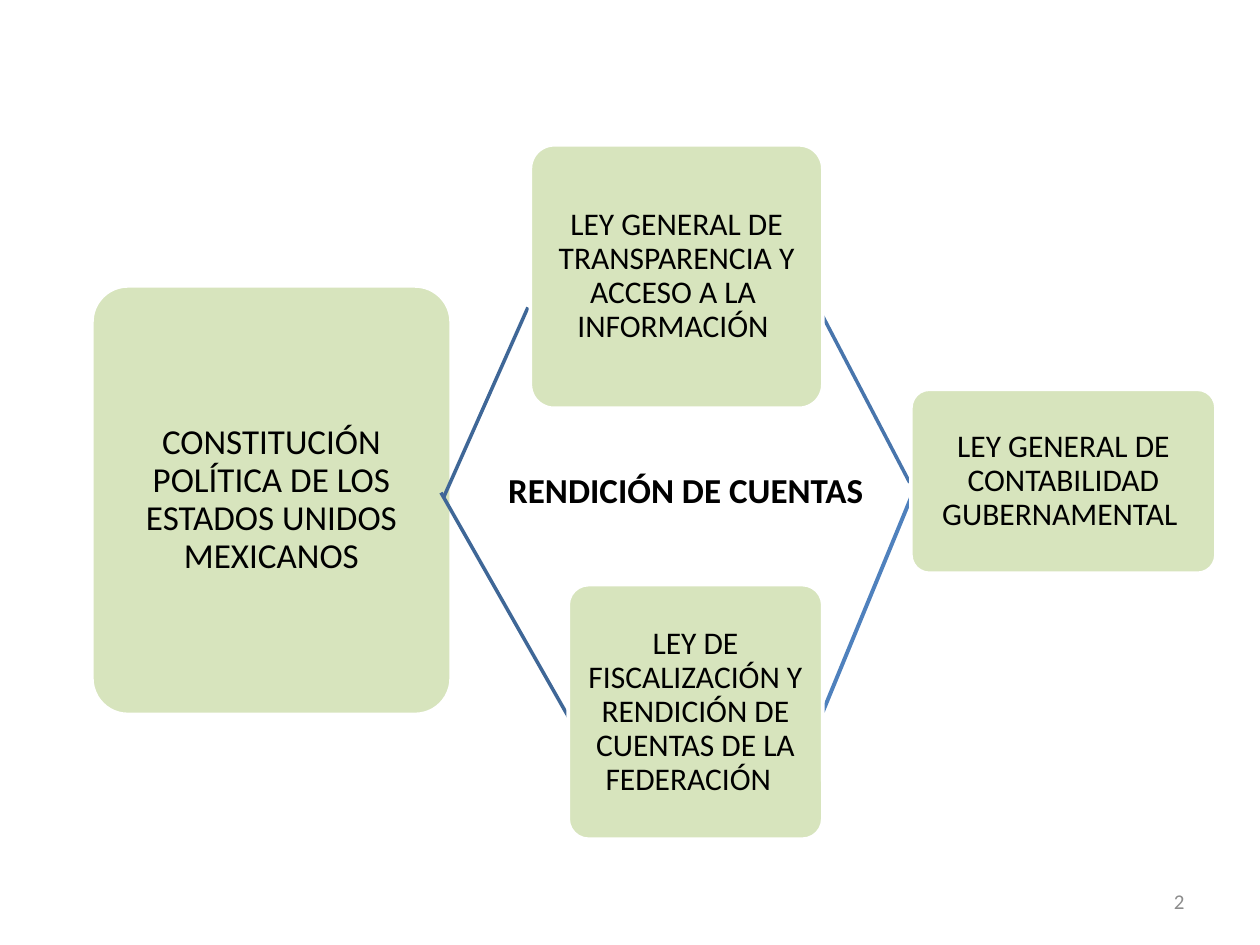
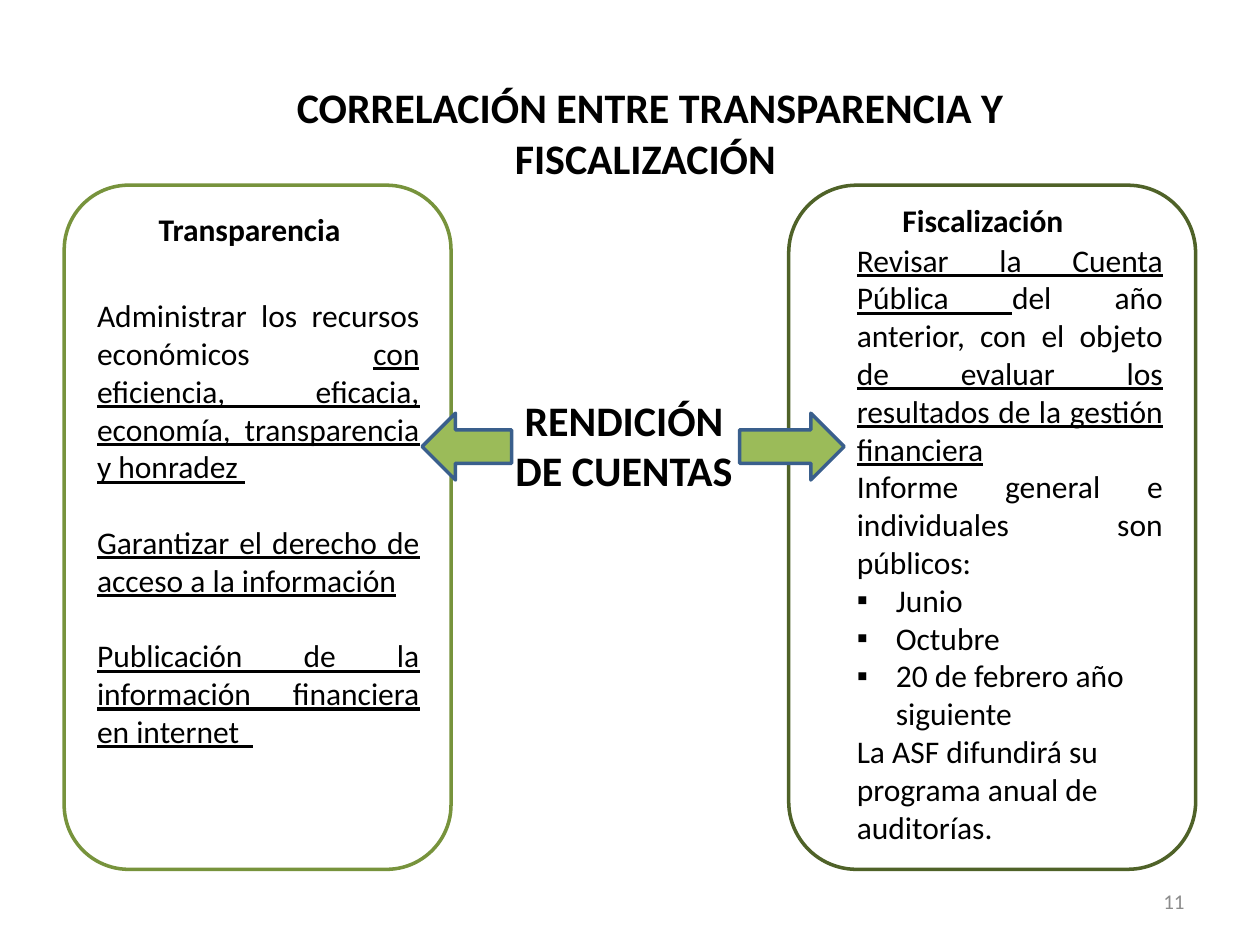
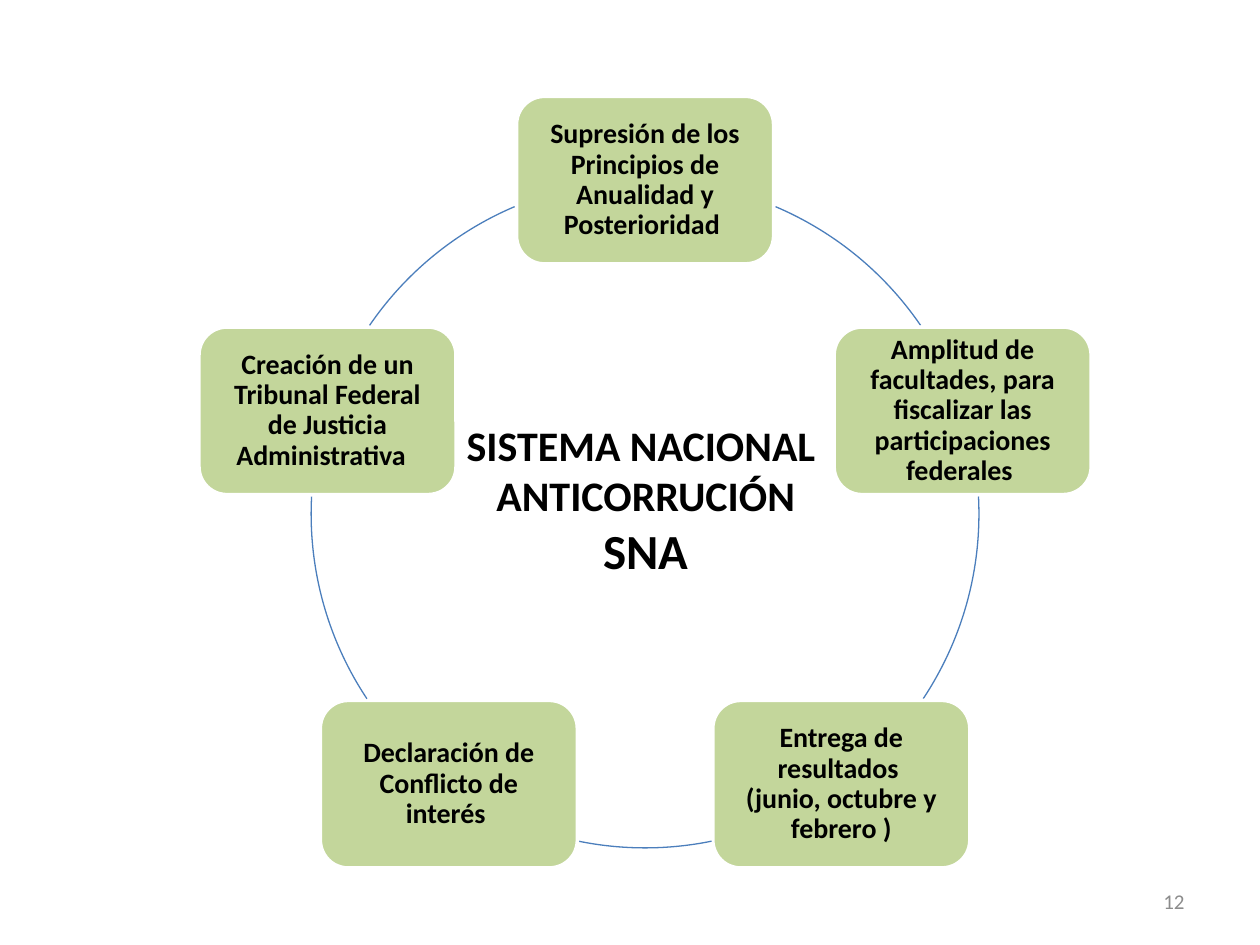
import math
from dataclasses import dataclass

from lxml import etree
from pptx import Presentation
from pptx.dml.color import RGBColor
from pptx.enum.shapes import MSO_CONNECTOR, MSO_SHAPE
from pptx.enum.text import MSO_ANCHOR, MSO_AUTO_SIZE, PP_ALIGN
from pptx.oxml.ns import qn
from pptx.util import Inches, Pt

ROUNDED, ARC = MSO_SHAPE.ROUNDED_RECTANGLE, MSO_SHAPE.ARC
LEFT_ARROW, RIGHT_ARROW = MSO_SHAPE.LEFT_ARROW, MSO_SHAPE.RIGHT_ARROW
STRAIGHT = MSO_CONNECTOR.STRAIGHT
TOP, MIDDLE = MSO_ANCHOR.TOP, MSO_ANCHOR.MIDDLE
LEFT, CENTER, RIGHT, JUSTIFY = PP_ALIGN.LEFT, PP_ALIGN.CENTER, PP_ALIGN.RIGHT, PP_ALIGN.JUSTIFY
LEFT_SIDE = 1


@dataclass(frozen=True)
class Theme:
    font: str = "Calibri"
    black: RGBColor = RGBColor.from_string("000000")
    white: RGBColor = RGBColor.from_string("FFFFFF")
    gray: RGBColor = RGBColor.from_string("8C8C8C")
    pale_green: RGBColor = RGBColor.from_string("D7E4BD")
    soft_green: RGBColor = RGBColor.from_string("C3D69B")
    arrow_green: RGBColor = RGBColor.from_string("9BBB59")
    panel_green: RGBColor = RGBColor.from_string("77933C")
    dark_green: RGBColor = RGBColor.from_string("4F6228")
    dark_blue: RGBColor = RGBColor.from_string("3F6797")
    middle_blue: RGBColor = RGBColor.from_string("4875AC")
    light_blue: RGBColor = RGBColor.from_string("4F81BD")
    arrow_blue: RGBColor = RGBColor.from_string("3A5F8C")
    ring_blue: RGBColor = RGBColor.from_string("4B7EBC")
    acronym: int = 28
    title: int = 24
    large: int = 20
    body: int = 18
    node: int = 16
    footer: int = 12


THEME = Theme()

presentation = Presentation()
presentation.slide_width, presentation.slide_height = Inches(10), Inches(7.5)
COLUMN = presentation.slide_width / 100
ROW = presentation.slide_height / 75


def area(left, top, width, height):
    """Turn columns and rows of the grid into slide lengths."""
    return [round(left * COLUMN), round(top * ROW), round(width * COLUMN), round(height * ROW)]


def write(shape, lines, size, bold=False, alignment=CENTER, color=THEME.black, anchor=TOP):
    """Fill a shape with paragraphs; parts between underscores are underlined."""
    frame = shape.text_frame
    frame.word_wrap, frame.auto_size, frame.vertical_anchor = True, MSO_AUTO_SIZE.NONE, anchor
    for index, line in enumerate(lines):
        paragraph = frame.paragraphs[0] if index == 0 else frame.add_paragraph()
        paragraph.alignment, paragraph.space_before = alignment, Pt(0)
        for part_index, part in enumerate(line.split("_")):
            if part:
                run = paragraph.add_run()
                run.text = part
                run.font.name, run.font.size, run.font.bold = THEME.font, Pt(size), bold
                run.font.color.rgb = color
                run.font.underline = part_index % 2 == 1
    return frame


# Slides with their titles and numbers
TITLE_ONLY, TWO_CONTENT = presentation.slide_layouts[5], presentation.slide_layouts[3]
slides = []
for layout, number, title_area, title_lines, title_size in [
    (TITLE_ONLY, "2", (38.2, 36.7, 33.1, 7.7), ["RENDICIÓN DE CUENTAS "], THEME.large),
    (TWO_CONTENT, "11", (13.8, 6, 75.6, 9.1),
     ["CORRELACIÓN ENTRE TRANSPARENCIA Y FISCALIZACIÓN "], THEME.title),
    (TITLE_ONLY, "12", (34.3, 32.8, 33.9, 13.8),
     ["SISTEMA NACIONAL ", "ANTICORRUCIÓN", "SNA"], THEME.title),
]:
    slide = presentation.slides.add_slide(layout)
    title = slide.shapes.title
    title.left, title.top, title.width, title.height = area(*title_area)
    write(title, title_lines, title_size, bold=True)
    footer = slide.shapes.add_textbox(*area(71.7, 69.5, 23.3, 4))
    write(footer, [number], THEME.footer, alignment=RIGHT, color=THEME.gray, anchor=MIDDLE)
    slides.append(slide)
laws_slide, correlation_slide, system_slide = slides

# Laws: links lie above the constitution and below the other laws
laws = [
    ((7.3, 22.7, 28.5, 34), 0.1, 0.1, THEME.large,
     "CONSTITUCIÓN POLÍTICA DE LOS ESTADOS UNIDOS MEXICANOS"),
    ((42.1, 11.5, 23.2, 20.9), 0.09, 0.07, THEME.body,
     "LEY GENERAL DE TRANSPARENCIA Y ACCESO A LA  INFORMACIÓN "),
    ((72.3, 30.9, 24.2, 14.6), 0.1, 0.05, THEME.body,
     "LEY GENERAL DE CONTABILIDAD GUBERNAMENTAL "),
    ((45.1, 46.4, 20.2, 20.2), 0.08, 0.04, THEME.body,
     "LEY DE FISCALIZACIÓN Y RENDICIÓN DE CUENTAS DE LA FEDERACIÓN  "),
]
links = [
    ((35.2, 39.5), (41.9, 24.4), THEME.dark_blue, 2),
    ((65.3, 25.1), (72.2, 38.3), THEME.middle_blue, 2),
    ((35, 39.1), (45.8, 58.1), THEME.dark_blue, 2),
    ((72.3, 39.5), (65.3, 56.7), THEME.light_blue, 2.25),
]
link_lines = []
for index, (law_area, corner, margin, size, text) in enumerate(laws):
    law = laws_slide.shapes.add_shape(ROUNDED, *area(*law_area))
    law.adjustments[0] = corner
    law.shadow.inherit = False
    law.fill.solid()
    law.fill.fore_color.rgb = THEME.pale_green
    law.line.color.rgb, law.line.width = THEME.white, Pt(2)
    frame = write(law, [text], size, anchor=MIDDLE)
    frame.paragraphs[0].line_spacing = 0.9
    frame.margin_left = frame.margin_right = frame.margin_top = frame.margin_bottom = Inches(margin)
    if index == 0:
        for start, end, color, width in links:
            link = laws_slide.shapes.add_connector(STRAIGHT, *area(*start, *end))
            link.line.color.rgb, link.line.width = color, Pt(width)
            etree.SubElement(link._element.spPr, qn("a:effectLst"))
            link_lines.append(link)
link_lines[-1].end_connect(law, 3)

# Correlation: outlined panels, headings and arrows
for shape_kind, shape_area, fill, outline in [
    (ROUNDED, (5.1, 14.7, 30.7, 54.3), None, THEME.panel_green),
    (ROUNDED, (62.6, 14.7, 32.3, 54.3), None, THEME.dark_green),
    (LEFT_ARROW, (33.5, 32.8, 7.1, 5.3), THEME.arrow_green, THEME.arrow_blue),
    (RIGHT_ARROW, (58.7, 32.8, 8.3, 5.3), THEME.arrow_green, THEME.arrow_blue),
]:
    shape = correlation_slide.shapes.add_shape(shape_kind, *area(*shape_area))
    shape.shadow.inherit = False
    shape.line.color.rgb, shape.line.width = outline, Pt(2)
    if fill is None:
        shape.fill.background()
    else:
        shape.fill.solid()
        shape.fill.fore_color.rgb = fill

for label_area, lines, size in [
    ((9.1, 16.2, 22, 4), ["Transparencia "], THEME.body),
    ((67.3, 15.5, 22, 4), ["Fiscalización "], THEME.body),
    ((39.8, 30.8, 20.2, 9.1), ["RENDICIÓN ", "DE CUENTAS "], THEME.title),
]:
    label = correlation_slide.shapes.add_textbox(*area(*label_area))
    write(label, lines, size, bold=True)

# Correlation: body texts
body_texts = [
    ((6.7, 23, 27.6, 37.4), [
        "Administrar los recursos económicos  "
        "_con eficiencia, eficacia, economía, transparencia y honradez _",
        "_Garantizar el derecho de acceso a la información_",
        "_Publicación de la información financiera en internet  _",
    ]),
    ((67, 18.6, 26.3, 49.5), [
        "_Revisar la Cuenta Pública _del año anterior, con el objeto "
        "_de evaluar los resultados de la gestión financiera_",
        "Informe general e individuales son públicos:",
        "Junio",
        "Octubre",
        "20 de febrero año siguiente",
        "La ASF difundirá su programa anual de auditorías.",
    ]),
]
BULLETED = ("Junio", "Octubre", "20 de febrero año siguiente")
bodies = list(correlation_slide.placeholders)[1:]
for body, (body_area, lines) in zip(bodies, body_texts):
    body.left, body.top, body.width, body.height = area(*body_area)
    frame = write(body, lines, THEME.body, alignment=JUSTIFY)
    for paragraph in frame.paragraphs:
        properties = paragraph._p.get_or_add_pPr()
        bulleted = paragraph.text in BULLETED
        indent = Inches(0.31) if bulleted else 0
        properties.set("marL", str(indent))
        properties.set("indent", str(-indent))
        if bulleted:
            etree.SubElement(properties, qn("a:buFont"), typeface="Arial")
            etree.SubElement(properties, qn("a:buChar"), char="▪")
        else:
            etree.SubElement(properties, qn("a:buNone"))
for paragraph in bodies[0].text_frame.paragraphs[1:]:
    paragraph.space_before = Pt(21.6)
for paragraph in bodies[1].text_frame.paragraphs[2:]:
    paragraph.alignment = LEFT

# Anti-corruption system: five measures evenly spaced on a ring
CENTER_X, CENTER_Y, RADIUS = 51.2, 40.8, 26.5
NODE_WIDTH, NODE_HEIGHT = 20.4, 13.3
measures = [
    "Supresión de los Principios de Anualidad y Posterioridad ",
    "Amplitud de facultades, para fiscalizar las participaciones federales ",
    "Entrega de resultados  (junio, octubre y febrero )",
    "Declaración de Conflicto de interés ",
    "Creación de un Tribunal Federal de Justicia Administrativa  ",
]
ring_arcs = [(293, 325.6), (357, 33.6), (78.5, 101.5), (146.4, 183), (214.4, 247)]
for index, (text, arc_angles) in enumerate(zip(measures, ring_arcs)):
    angle = math.radians(-90 + index * 360 / len(measures))
    left = CENTER_X + RADIUS * math.cos(angle) - NODE_WIDTH / 2
    top = CENTER_Y + RADIUS * math.sin(angle) - NODE_HEIGHT / 2
    node = system_slide.shapes.add_shape(ROUNDED, *area(left, top, NODE_WIDTH, NODE_HEIGHT))
    node.shadow.inherit = False
    node.fill.solid()
    node.fill.fore_color.rgb = THEME.soft_green
    node.line.color.rgb, node.line.width = THEME.white, Pt(2)
    frame = write(node, [text], THEME.node, bold=True, anchor=MIDDLE)
    frame.paragraphs[0].line_spacing = 0.9
    frame.margin_left = frame.margin_right = frame.margin_top = frame.margin_bottom = Inches(0.13)

    arc = system_slide.shapes.add_shape(
        ARC, *area(CENTER_X - RADIUS, CENTER_Y - RADIUS, 2 * RADIUS, 2 * RADIUS))
    for position, degrees in enumerate(arc_angles):
        arc.adjustments[position] = degrees * 0.6
    arc.shadow.inherit = False
    arc.fill.background()
    arc.line.color.rgb, arc.line.width = THEME.ring_blue, Pt(0.75)

acronym = system_slide.shapes.title.text_frame.paragraphs[-1]
acronym.runs[0].font.size = Pt(THEME.acronym)

presentation.save("out.pptx")
